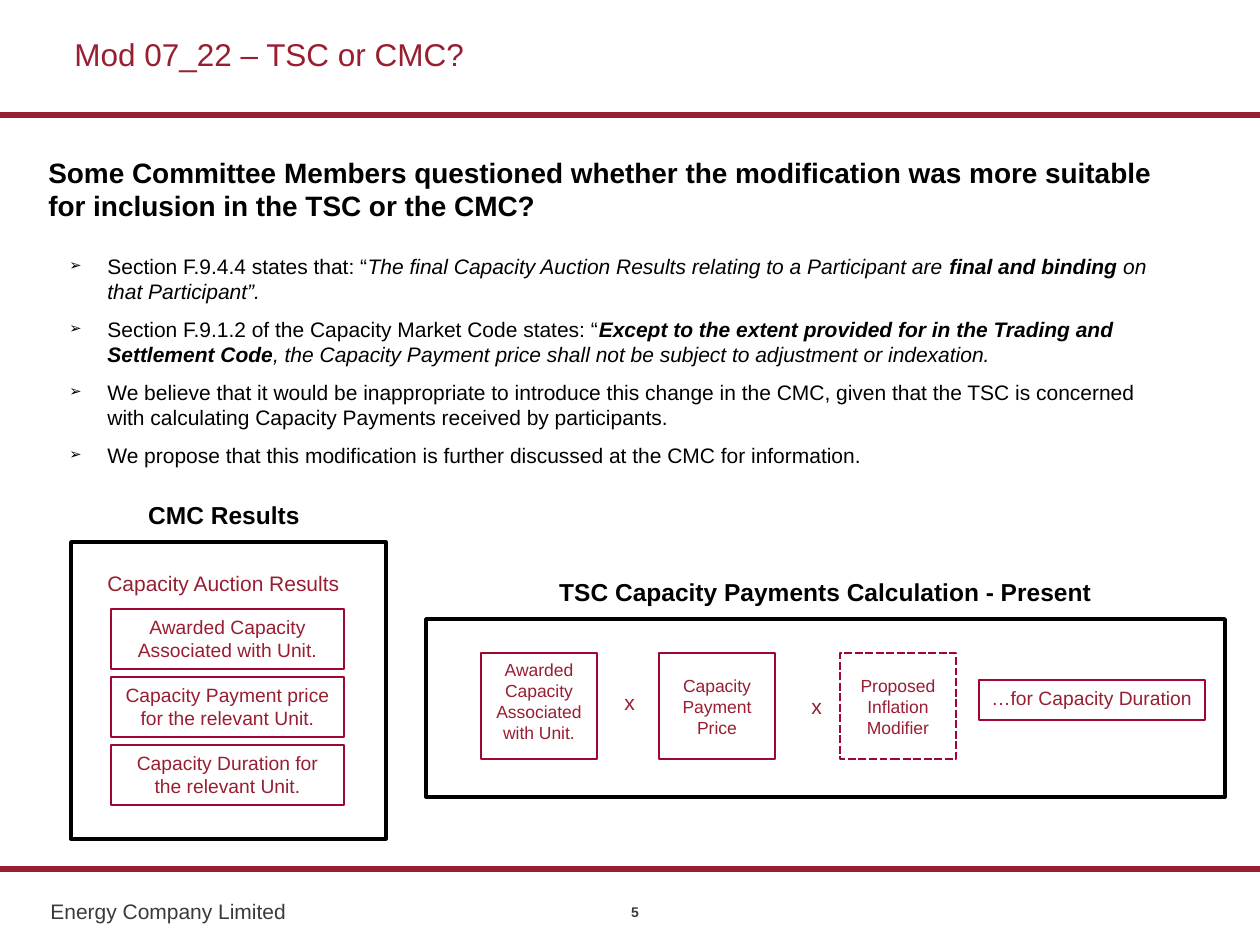
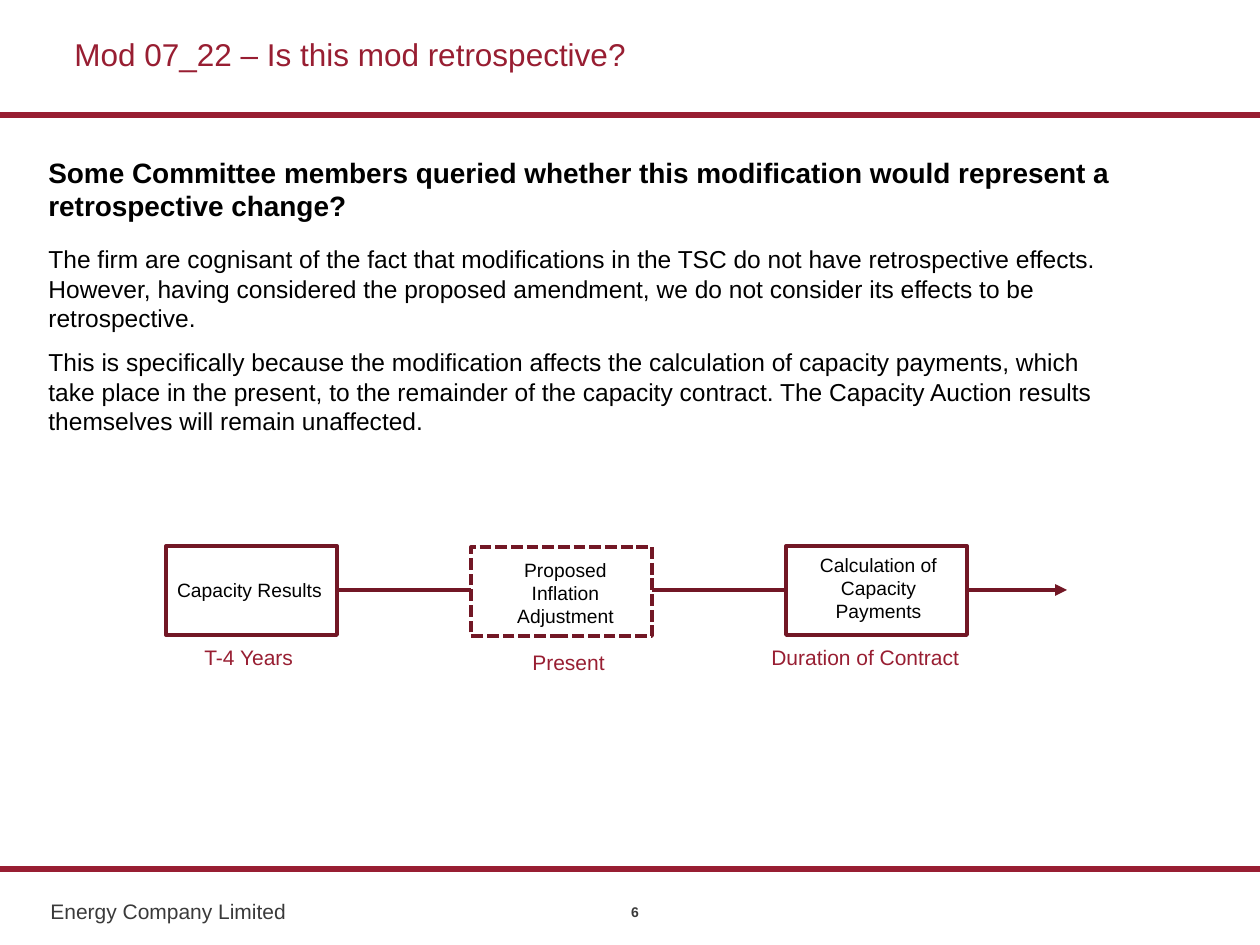
from dataclasses import dataclass

from lxml.etree import SubElement as Sub
from pptx import Presentation
from pptx.dml.color import RGBColor as Rgb
from pptx.enum.dml import MSO_LINE_DASH_STYLE as Dash
from pptx.enum.shapes import MSO_CONNECTOR as Link, MSO_SHAPE as Shape
from pptx.enum.text import MSO_ANCHOR as Anchor, PP_ALIGN as Align
from pptx.oxml.ns import qn
from pptx.util import Emu, Pt


@dataclass(frozen=True)
class Theme:
    font: str = "Arial"
    red: str = "981E32"
    rose: str = "A00730"
    wine: str = "721725"
    black: str = "000000"
    white: str = "FFFFFF"
    gray: str = "3A3A3A"
    title: int = 18
    head: int = 16
    lead: int = 14
    body: int = 12
    box: int = 11
    small: int = 10
    tiny: int = 8


T = Theme()
WIDE, HIGH = 1260, 945
MID = {"alignment": Align.CENTER}
BOLD = {"bold": True}
SLANT = {"italic": True}
STRONG = {"bold": True, "italic": True}


def px(num):
    return Emu(round(num * 914400 / 126))


def put(item, vals):
    for key, val in vals.items():
        setattr(item, key, val)


def stroke(line, tint, weight, dash=None):
    line.color.rgb = Rgb.from_string(tint)
    put(line, {"width": Pt(weight), "dash_style": dash})


def bullet(para):
    props = para._p.get_or_add_pPr()
    props.set("marL", str(px(38)))
    props.set("indent", str(-px(38)))
    Sub(props, qn("a:buSzPct"), val="70000")
    Sub(props, qn("a:buFont"), typeface=T.font)
    Sub(props, qn("a:buChar"), char="➢")


def write(shape, paras, size, tint, look=None, form=None, anchor=Anchor.TOP,
          gap=0, mark=False):
    frame = shape.text_frame
    put(frame, {"word_wrap": True, "vertical_anchor": anchor})
    for i, runs in enumerate(paras):
        para = frame.paragraphs[0] if i == 0 else frame.add_paragraph()
        if mark:
            bullet(para)
        put(para, {"alignment": Align.LEFT, **(form or {})})
        if i and gap:
            para.space_before = Pt(gap)
        for text, style in [(runs, {})] if isinstance(runs, str) else runs:
            run = para.add_run()
            run.text = text
            put(run.font, {"name": T.font, "size": Pt(size), **(look or {}), **style})
            run.font.color.rgb = Rgb.from_string(tint)


def label(slide, area, paras, size, tint, **opts):
    shape = slide.shapes.add_textbox(*map(px, area))
    write(shape, [paras] if isinstance(paras, str) else paras, size, tint, **opts)


def frame(slide, area, tint, weight, dash=None, fill=None):
    shape = slide.shapes.add_shape(Shape.RECTANGLE, *map(px, area))
    shape.shadow.inherit = False
    if fill:
        shape.fill.solid()
        shape.fill.fore_color.rgb = Rgb.from_string(fill)
    else:
        shape.fill.background()
    stroke(shape.line, tint, weight, dash)
    return shape


def card(slide, area, text, size, dash=None, form=MID, **opts):
    shape = frame(slide, area, T.rose, 1.5, dash)
    write(shape, [text], size, T.red, form=form, **opts)


def rule(slide, left, right, top, tint, weight, arrow=False):
    line = slide.shapes.add_connector(Link.STRAIGHT, *map(px, (left, top, right, top)))
    stroke(line.line, tint, weight)
    if arrow:
        Sub(line.line._get_or_add_ln(), qn("a:tailEnd"), type="triangle")
    Sub(line._element.spPr, qn("a:effectLst"))


def page(deck, num, title, head):
    slide = deck.slides.add_slide(deck.slide_layouts[6])
    label(slide, (38, 892, 374, 38), "Energy Company Limited", T.body, T.gray)
    for top in (115, 869):
        rule(slide, 0, WIDE, top, T.red, 3)
    label(slide, (62, 0, 1169, 113), title, T.title, T.red,
          form={"line_spacing": 0.9}, anchor=Anchor.MIDDLE)
    label(slide, (577, 897, 116, 33), str(num), T.tiny, T.gray, look=BOLD, form=MID)
    label(slide, (36, 149, 1159, 78), head, T.head, T.black, look=BOLD)
    return slide


def results(slide):
    label(slide, (95, 564, 315, 38), "Capacity Auction Results", T.body, T.red)
    for i, text in enumerate((
        "Awarded Capacity Associated with Unit.",
        "Capacity Payment price for the relevant Unit.",
        "Capacity Duration for the relevant Unit.",
    )):
        card(slide, (111, 609 + 68 * i, 233, 60), text, T.box)
    frame(slide, (71, 542, 315, 297), T.black, 2)
    label(slide, (10, 494, 428, 43), "CMC Results", T.lead, T.black, look=BOLD, form=MID)


def payments(slide):
    for left, text, dash, anchor in (
        (481, "Awarded Capacity Associated with Unit.", None, Anchor.TOP),
        (659, "Capacity Payment Price", None, Anchor.MIDDLE),
        (840, "Proposed Inflation Modifier", Dash.SQUARE_DOT, Anchor.MIDDLE),
    ):
        card(slide, (left, 653, 116, 106), text, T.small, dash, anchor=anchor)
    for left, top in ((612, 683), (799, 687)):
        label(slide, (left, top, 40, 43), "x", T.body, T.red)
    card(slide, (979, 680, 226, 40), "…for Capacity Duration", T.box, form=None)
    frame(slide, (426, 619, 799, 178), T.black, 2)
    label(slide, (530, 571, 591, 43), "TSC Capacity Payments Calculation - Present",
          T.lead, T.black, look=BOLD, form=MID)


def timeline(slide):
    rule(slide, 339, 1067, 590, T.wine, 2.25, arrow=True)
    for area, dash, spot, paras, note, when in (
        ((786, 546, 181, 89), None, (793, 547, 171, 83),
         ["Calculation of Capacity Payments"], (759, 638, 248, 38), "Duration of Contract"),
        ((166, 546, 171, 89), None, (164, 572, 171, 37),
         ["Capacity Results"], (192, 638, 154, 38), "T-4 Years"),
        ((471, 547, 181, 89), Dash.SQUARE_DOT, (475, 552, 181, 83),
         ["Proposed", "Inflation Adjustment"], (520, 643, 154, 38), "Present"),
    ):
        frame(slide, area, T.wine, 2.25, dash, T.white)
        label(slide, spot, paras, T.box, T.black, form=MID)
        label(slide, note, when, T.body, T.red)


def main():
    deck = Presentation()
    put(deck, {"slide_width": px(WIDE), "slide_height": px(HIGH)})

    code = page(deck, 5, "Mod 07_22 – TSC or CMC?",
                "Some Committee Members questioned whether the modification was more "
                "suitable for inclusion in the TSC or the CMC?")
    label(code, (57, 247, 1105, 205), [
        [("Section F.9.4.4 states that: “", {}),
         ("The final Capacity Auction Results relating to a Participant are ", SLANT),
         ("final and binding", STRONG),
         (" on that Participant”.", SLANT)],
        [("Section F.9.1.2 of the Capacity Market Code states: “", {}),
         ("Except to the extent provided for in the Trading and Settlement Code", STRONG),
         (", the Capacity Payment price shall not be subject to adjustment or "
          "indexation.", SLANT)],
        "We believe that it would be inappropriate to introduce this change in the CMC, "
        "given that the TSC is concerned with calculating Capacity Payments received by "
        "participants.",
        "We propose that this modification is further discussed at the CMC for "
        "information.",
    ], T.body, T.black, gap=7.2, mark=True)
    results(code)
    payments(code)

    past = page(deck, 6, "Mod 07_22 – Is this mod retrospective?",
                "Some Committee members queried whether this modification would "
                "represent a retrospective change?")
    label(past, (36, 238, 1105, 212), [
        "The firm are cognisant of the fact that modifications in the TSC do not have "
        "retrospective effects. However, having considered the proposed amendment, we do "
        "not consider its effects to be retrospective.",
        "This is specifically because the modification affects the calculation of "
        "capacity payments, which take place in the present, to the remainder of the "
        "capacity contract. The Capacity Auction results themselves will remain "
        "unaffected.",
    ], T.lead, T.black, gap=8.4)
    timeline(past)
    deck.save("out.pptx")


if __name__ == "__main__":
    main()
